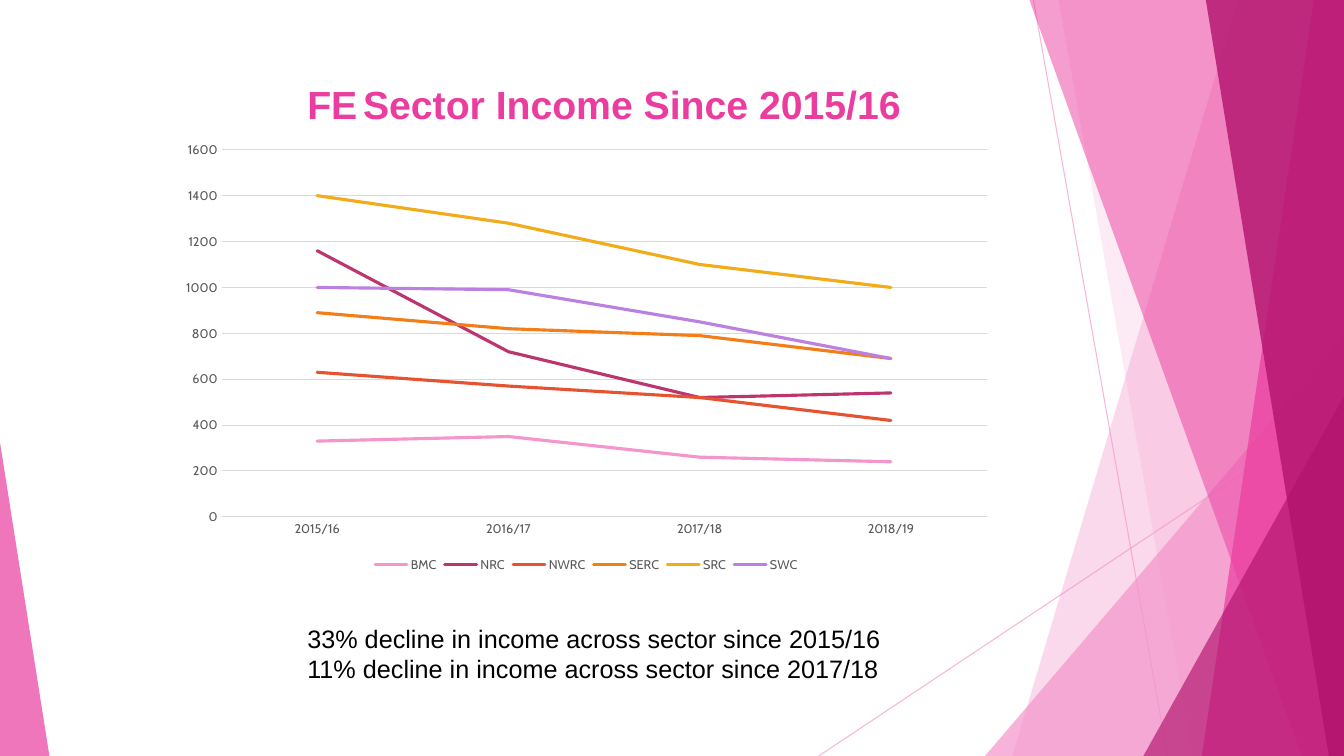
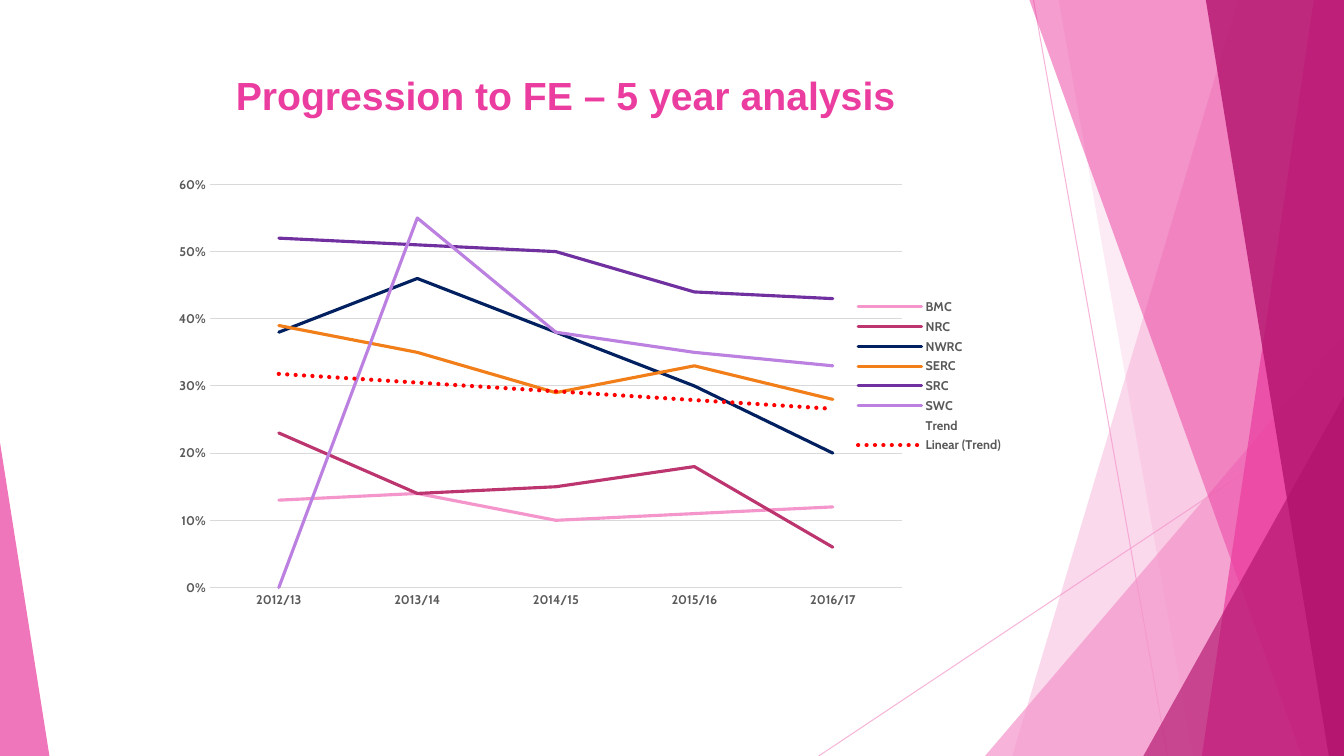
import pptx
import pptx.chart.data
import pptx.dml.color
import pptx.enum.chart
import pptx.enum.shapes
import pptx.oxml
import pptx.oxml.ns
import pptx.util
from lxml import etree

Inches = pptx.util.Inches
Pt = pptx.util.Pt
qn = pptx.oxml.ns.qn

WIDE, HIGH = 13.33, 7.5
HUES = {
    "pink": "F496CB", "rose": "EB3D9F", "plum": "B2136D",
    "wine": "BC356F", "brick": "E65331", "orange": "F27E19",
    "gold": "F2AC19", "lilac": "BC80E0", "navy": "002060",
    "violet": "7030A0", "red": "FF0000", "grid": "D9D9D9",
    "grey": "595959", "black": "000000",
}
HEAD, BODY = "Arial", "Cabin"

# Facets from back to front: a band has its top and bottom x, a wedge its box.
FACETS = [
    ("band", (12.28, 10.04), "pink", 36),
    ("band", (10.5, 11.83), "pink", 20),
    ("wedge", (9.77, 3.33, 3.56, 4.17, 1), "pink", 72),
    ("band", (10.21, 12.91), "rose", 50),
    ("band", (13.03, 11.92), "rose", 70),
    ("band", (11.96, 13.18), "plum", 80),
    ("wedge", (11.34, 3.93, 1.99, 3.57, 1), "plum", 66),
    ("wedge", (0, 4.39, 0.49, 3.11, 0), "rose", 70),
]
RAYS = [(10.25, 0, 11.58, HIGH), (WIDE, 4.03, 8.12, HIGH)]


def tint(hue):
    return pptx.dml.color.RGBColor.from_string(HUES[hue])


def fade(part, share):
    """Set the opacity, in percent, of every solid colour in a shape."""
    for node in part._element.spPr.iter(qn("a:srgbClr")):
        etree.SubElement(node, qn("a:alpha")).set("val", str(share * 1000))


def ray(slide, ends):
    link = slide.shapes.add_connector(
        pptx.enum.shapes.MSO_CONNECTOR.STRAIGHT, *map(Inches, ends))
    link.line.color.rgb = tint("pink")
    link.line.width = Pt(0.75)
    fade(link, 70)
    etree.SubElement(link._element.spPr, qn("a:effectLst"))


def band(slide, top, base):
    """Draw a facet that runs from a slanted left edge to the slide's right."""
    pen = slide.shapes.build_freeform(Inches(top), 0)
    pen.add_line_segments([(Inches(x), Inches(y)) for x, y in
                           ((WIDE, 0), (WIDE, HIGH), (base, HIGH))])
    return pen.convert_to_shape()


def wedge(slide, left, top, width, height, peak):
    """Draw a triangle whose peak is a share of its width."""
    part = slide.shapes.add_shape(
        pptx.enum.shapes.MSO_SHAPE.ISOSCELES_TRIANGLE,
        *map(Inches, (left, top, width, height)))
    part.adjustments[0] = peak
    return part


def decor(slide):
    for ends in RAYS:
        ray(slide, ends)
    for kind, place, hue, share in FACETS:
        part = (band if kind == "band" else wedge)(slide, *place)
        part.shadow.inherit = False
        part.fill.solid()
        part.fill.fore_color.rgb = tint(hue)
        part.line.fill.background()
        fade(part, share)


def style(font, face, size, hue, bold=False):
    font.name, font.size, font.bold = face, Pt(size), bold
    font.color.rgb = tint(hue)


def title(slide, box, *parts):
    """Write the parts as a heading; a blank part is a narrow gap."""
    frame = slide.shapes.add_textbox(*map(Inches, box)).text_frame
    frame.word_wrap = False
    for part in parts:
        run = frame.paragraphs[0].add_run()
        run.text = part
        if part.strip():
            style(run.font, HEAD, 28, "rose", True)
        else:
            style(run.font, BODY, 18, "black")


def notes(slide, box, lines):
    frame = slide.shapes.add_textbox(*map(Inches, box)).text_frame
    frame.word_wrap = True
    frame.text = "\n".join(lines)
    for para in frame.paragraphs:
        for run in para.runs:
            style(run.font, HEAD, 18, "black")


def graph(slide, box, years, rows, top, step, form, side, bold=False):
    """Add a line chart; a row without a hue has no line of its own."""
    data = pptx.chart.data.CategoryChartData(number_format=form)
    data.categories = years
    for name, _, vals in rows:
        data.add_series(name, vals)
    chart = slide.shapes.add_chart(
        pptx.enum.chart.XL_CHART_TYPE.LINE, *map(Inches, box), data).chart
    style(chart.font, BODY, 9, "grey", bold)
    chart.has_title = False
    chart.has_legend = True
    chart.legend.position = side
    chart.legend.include_in_layout = False

    for axis in (chart.category_axis, chart.value_axis):
        axis.major_tick_mark = pptx.enum.chart.XL_TICK_MARK.NONE
        axis.minor_tick_mark = pptx.enum.chart.XL_TICK_MARK.NONE
    scale = chart.value_axis
    scale.minimum_scale, scale.maximum_scale = 0, top
    scale.major_unit = step
    scale.tick_labels.number_format = form
    scale.tick_labels.number_format_is_linked = False
    scale.format.line.fill.background()
    scale.has_major_gridlines = True
    for line in (scale.major_gridlines.format.line,
                 chart.category_axis.format.line):
        line.color.rgb = tint("grid")
        line.width = Pt(0.75)

    plot = chart.plots[0]
    plot.vary_by_categories = False
    for serie, (_, hue, _) in zip(plot.series, rows):
        serie.smooth = False
        line = serie.format.line
        line.width = Pt(2.25)
        if hue:
            line.color.rgb = tint(hue)
        else:
            line.fill.background()
        serie._element.find(qn("c:spPr")).find(qn("a:ln")).set("cap", "rnd")
    return chart


def trend(serie, hue):
    """Add a dotted linear trend line to a series."""
    node = pptx.oxml.parse_xml(
        f'<c:trendline {pptx.oxml.ns.nsdecls("c", "a")}><c:spPr>'
        f'<a:ln w="{Pt(3)}" cap="rnd"><a:solidFill>'
        f'<a:srgbClr val="{HUES[hue]}"/></a:solidFill>'
        '<a:prstDash val="sysDot"/></a:ln></c:spPr>'
        '<c:trendlineType val="linear"/><c:dispRSqr val="0"/>'
        '<c:dispEq val="0"/></c:trendline>')
    serie._element.find(qn("c:cat")).addprevious(node)


def inset(chart, left, top, width, height):
    """Fix the inner plot area as shares of the chart."""
    area = chart._chartSpace.find(qn("c:chart")).find(qn("c:plotArea"))
    for old in area.findall(qn("c:layout")):
        area.remove(old)
    layout = etree.Element(qn("c:layout"))
    manual = etree.SubElement(layout, qn("c:manualLayout"))
    for tag, val in (("layoutTarget", "inner"), ("xMode", "edge"),
                     ("yMode", "edge"), ("x", left), ("y", top),
                     ("w", width), ("h", height)):
        etree.SubElement(manual, qn("c:" + tag)).set("val", str(val))
    area.insert(0, layout)


def income(slide):
    graph(slide, (1.68, 1.32, 8.27, 4.4),
          ["2015/16", "2016/17", "2017/18", "2018/19"],
          [("BMC", "pink", (330, 350, 260, 240)),
           ("NRC", "wine", (1160, 720, 520, 540)),
           ("NWRC", "brick", (630, 570, 520, 420)),
           ("SERC", "orange", (890, 820, 790, 690)),
           ("SRC", "gold", (1400, 1280, 1100, 1000)),
           ("SWC", "lilac", (1000, 990, 850, 690))],
          1600, 200, "General", pptx.enum.chart.XL_LEGEND_POSITION.BOTTOM)
    title(slide, (2.95, 0.75, 6.18, 0.57),
          "FE", " ", "Sector Income Since 2015/16")
    notes(slide, (2.95, 6.13, 6.67, 0.71),
          ["33% decline in income across sector since 2015/16",
           "11% decline in income across sector since 2017/18"])


def progress(slide):
    chart = graph(
        slide, (1.57, 1.23, 8.48, 5),
        ["2012/13", "2013/14", "2014/15", "2015/16", "2016/17"],
        [("BMC", "pink", (0.13, 0.14, 0.1, 0.11, 0.12)),
         ("NRC", "wine", (0.23, 0.14, 0.15, 0.18, 0.06)),
         ("NWRC", "navy", (0.38, 0.46, 0.38, 0.3, 0.2)),
         ("SERC", "orange", (0.39, 0.35, 0.29, 0.33, 0.28)),
         ("SRC", "violet", (0.52, 0.51, 0.5, 0.44, 0.43)),
         ("SWC", "lilac", (0, 0.55, 0.38, 0.35, 0.33)),
         ("Trend", None, (0.27, 0.36, 0.3, 0.29, 0.24))],
        0.6, 0.1, "0%", pptx.enum.chart.XL_LEGEND_POSITION.RIGHT, True)
    trend(chart.plots[0].series[-1], "red")
    inset(chart, 0.06, 0.12, 0.81, 0.8)
    title(slide, (2.24, 0.66, 6.82, 0.57),
          "Progression to FE – 5 year analysis")


def main():
    deck = pptx.Presentation()
    deck.slide_width, deck.slide_height = Inches(WIDE), Inches(HIGH)
    for fill in (income, progress):
        slide = deck.slides.add_slide(deck.slide_layouts[6])
        decor(slide)
        fill(slide)
    deck.save("out.pptx")


if __name__ == "__main__":
    main()
